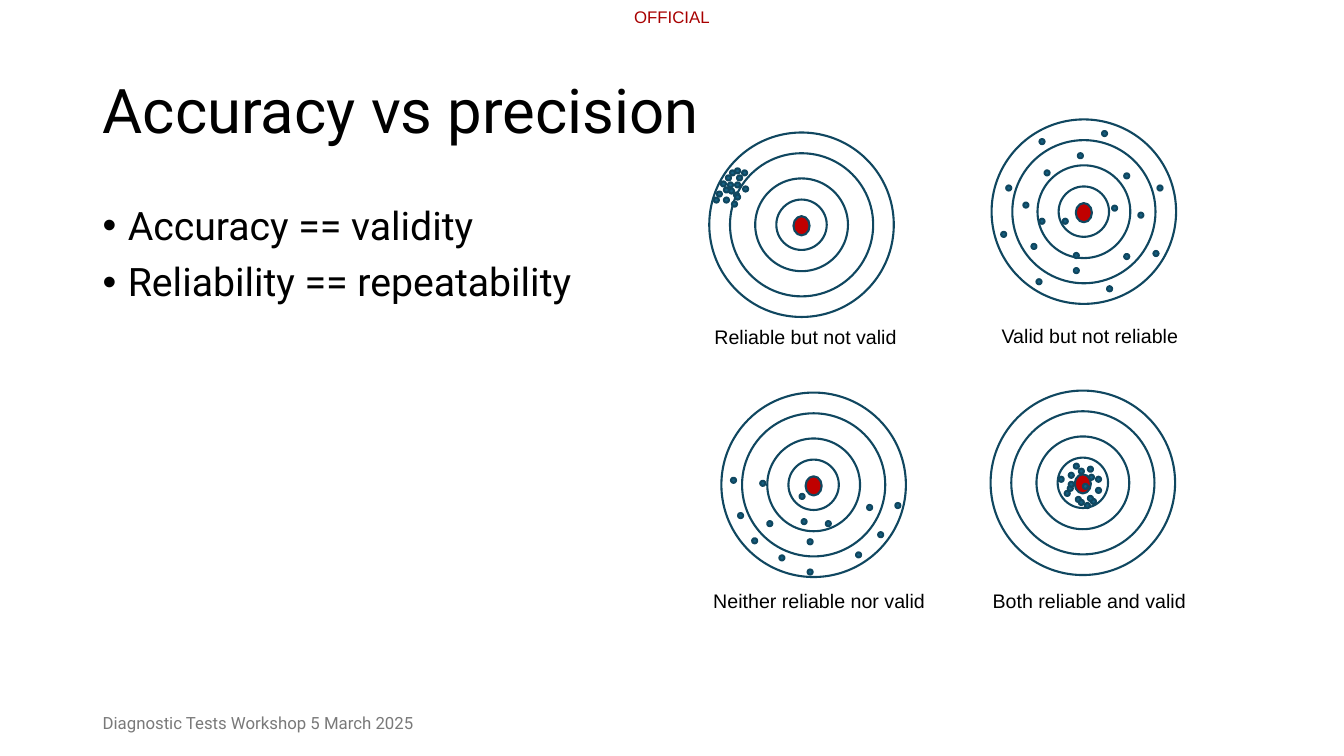
"""Build the accuracy versus precision slide with four shot targets."""
from dataclasses import dataclass

from lxml.etree import SubElement
from pptx import Presentation
from pptx.dml.color import RGBColor
from pptx.enum.shapes import MSO_SHAPE as Preset
from pptx.enum.text import MSO_ANCHOR as Anchor, MSO_AUTO_SIZE as AutoSize, PP_ALIGN as Align
from pptx.oxml.ns import qn
from pptx.slide import Slide
from pptx.util import Inches, Pt

COLORS = {
    "text": "000000",
    "marking": "A80000",
    "footer": "797979",
    "ring": "FFFFFF",
    "bullseye": "C00000",
    "shot": "156082",
    "outline": "104760",
}
RING_DIAMETERS = (1.83, 1.42, 0.92, 0.5)
BULLSEYE_WIDTH, BULLSEYE_HEIGHT = 0.16, 0.19
SHOT_SIZE = 0.05


@dataclass(frozen=True)
class Box:
    left: float
    top: float
    width: float
    height: float


@dataclass(frozen=True)
class Label:
    lines: tuple[str, ...]
    box: Box
    size: float
    font: str = "Roboto"
    color: str = "text"
    align: Align = Align.LEFT
    anchor: Anchor = Anchor.TOP
    inset: bool = True
    fit: bool = False
    bullets: bool = False
    line_spacing: float = 1.0


@dataclass(frozen=True)
class Target:
    caption: str
    caption_box: Box
    center: tuple[float, float]
    shots: tuple[tuple[float, float], ...]


LABELS = (
    Label(("OFFICIAL",), Box(6.29, 0.07, 0.8, 0.2), 12, "Arial", "marking", inset=False, fit=True),
    Label(("Accuracy vs precision",), Box(0.92, 0.4, 11.5, 1.45), 44,
          anchor=Anchor.MIDDLE, line_spacing=0.9),
    Label(("Accuracy == validity", "Reliability == repeatability"), Box(0.92, 2, 11.5, 4.76), 28,
          bullets=True, line_spacing=0.9),
    Label(("Diagnostic Tests Workshop 5 March 2025",), Box(0.92, 6.97, 4.5, 0.4), 12,
          color="footer", anchor=Anchor.MIDDLE),
)

TARGETS = (
    Target("Reliable but not valid", Box(6.93, 3.17, 2.12, 0.34), (7.95, 2.23), (
        (7.31, 1.74), (7.18, 1.86), (7.2, 1.74), (7.18, 1.96), (7.24, 1.69), (7.28, 1.91),
        (7.29, 1.81), (7.29, 1.67), (7.08, 1.96), (7.15, 1.8), (7.22, 1.81), (7.26, 2),
        (7.37, 1.85), (7.29, 1.93), (7.11, 1.9), (7.36, 1.69), (7.23, 1.87),
    )),
    Target("Valid but not reliable", Box(9.75, 3.16, 2.12, 0.34), (10.75, 2.1), (
        (9.98, 1.84), (10.31, 1.38), (10.23, 2.42), (10.65, 2.51), (10.98, 2.84), (11.15, 2.52),
        (10.15, 2.01), (10.69, 1.52), (10.28, 2.77), (10.65, 2.66), (11.29, 2.11), (11.44, 2.49),
        (11.15, 1.72), (10.93, 1.3), (11.48, 1.84), (10.31, 2.17), (9.93, 2.3), (10.54, 2.17),
        (11.03, 2.04), (10.36, 1.69),
    )),
    Target("Neither reliable nor valid", Box(6.94, 5.79, 2.37, 0.34), (8.07, 4.81), (
        (7.32, 5.09), (8.01, 5.35), (7.61, 5.17), (8.01, 5.65), (8.71, 5.28), (8.49, 5.48),
        (7.73, 5.51), (8.19, 5.17), (7.25, 4.74), (7.54, 4.77), (7.93, 4.9), (7.46, 5.34),
        (8.6, 5.01), (8.88, 4.99), (7.95, 5.15),
    )),
    Target("Both reliable and valid", Box(9.62, 5.79, 2.37, 0.34), (10.74, 4.79), (
        (10.59, 4.82), (10.76, 4.99), (10.82, 4.95), (10.87, 4.84), (10.7, 4.65), (10.8, 4.71),
        (10.67, 4.93), (10.79, 4.63), (10.6, 4.78), (10.6, 4.69), (10.87, 4.73), (10.7, 4.96),
        (10.74, 4.8), (10.56, 4.87), (10.65, 4.6), (10.5, 4.73), (10.79, 4.92),
    )),
)


def color(name: str) -> RGBColor:
    """Return the named colour."""
    return RGBColor.from_string(COLORS[name])


def draw_label(slide: Slide, label: Label) -> None:
    """Draw a text box with one paragraph per line."""
    box = label.box
    shape = slide.shapes.add_textbox(
        Inches(box.left), Inches(box.top), Inches(box.width), Inches(box.height))
    frame = shape.text_frame
    frame.word_wrap = label.inset
    frame.vertical_anchor = label.anchor
    frame.auto_size = AutoSize.SHAPE_TO_FIT_TEXT if label.fit else AutoSize.NONE
    if not label.inset:
        frame.margin_left = frame.margin_right = frame.margin_top = frame.margin_bottom = 0
    frame.text = "\n".join(label.lines)
    for index, paragraph in enumerate(frame.paragraphs):
        paragraph.alignment = label.align
        paragraph.line_spacing = label.line_spacing
        if index:
            paragraph.space_before = Pt(10)
        if label.bullets:
            properties = paragraph._p.get_or_add_pPr()
            properties.set("marL", str(Inches(0.25)))
            properties.set("indent", str(Inches(-0.25)))
            SubElement(properties, qn("a:buFont"), typeface="Arial")
            SubElement(properties, qn("a:buChar"), char="•")
        paragraph.font.name = label.font
        paragraph.font.size = Pt(label.size)
        paragraph.font.color.rgb = color(label.color)


def draw_round(slide: Slide, preset: Preset, box: Box, fill: str) -> None:
    """Draw one outlined round shape."""
    shape = slide.shapes.add_shape(
        preset, Inches(box.left), Inches(box.top), Inches(box.width), Inches(box.height))
    shape.shadow.inherit = False
    shape.fill.solid()
    shape.fill.fore_color.rgb = color(fill)
    shape.line.color.rgb = color("outline")
    shape.line.width = Pt(1.5)


def draw_target(slide: Slide, target: Target) -> None:
    """Draw the rings, bullseye, caption and shots of a target."""
    x, y = target.center
    for diameter in RING_DIAMETERS:
        ring = Box(x - diameter / 2, y - diameter / 2, diameter, diameter)
        draw_round(slide, Preset.OVAL, ring, "ring")
    bullseye = Box(x - BULLSEYE_WIDTH / 2, y + 0.01 - BULLSEYE_HEIGHT / 2,
                   BULLSEYE_WIDTH, BULLSEYE_HEIGHT)
    draw_round(slide, Preset.OVAL, bullseye, "bullseye")
    draw_label(slide, Label((target.caption,), target.caption_box, 14, "Arial",
                            align=Align.CENTER, fit=True))
    for left, top in target.shots:
        draw_round(slide, Preset.FLOWCHART_CONNECTOR, Box(left, top, SHOT_SIZE, SHOT_SIZE), "shot")


def main() -> None:
    """Build and save the presentation."""
    presentation = Presentation()
    presentation.slide_width = Inches(13.33)
    presentation.slide_height = Inches(7.5)
    slide = presentation.slides.add_slide(presentation.slide_layouts[6])
    for label in LABELS:
        draw_label(slide, label)
    for target in TARGETS:
        draw_target(slide, target)
    presentation.save("out.pptx")


if __name__ == "__main__":
    main()
